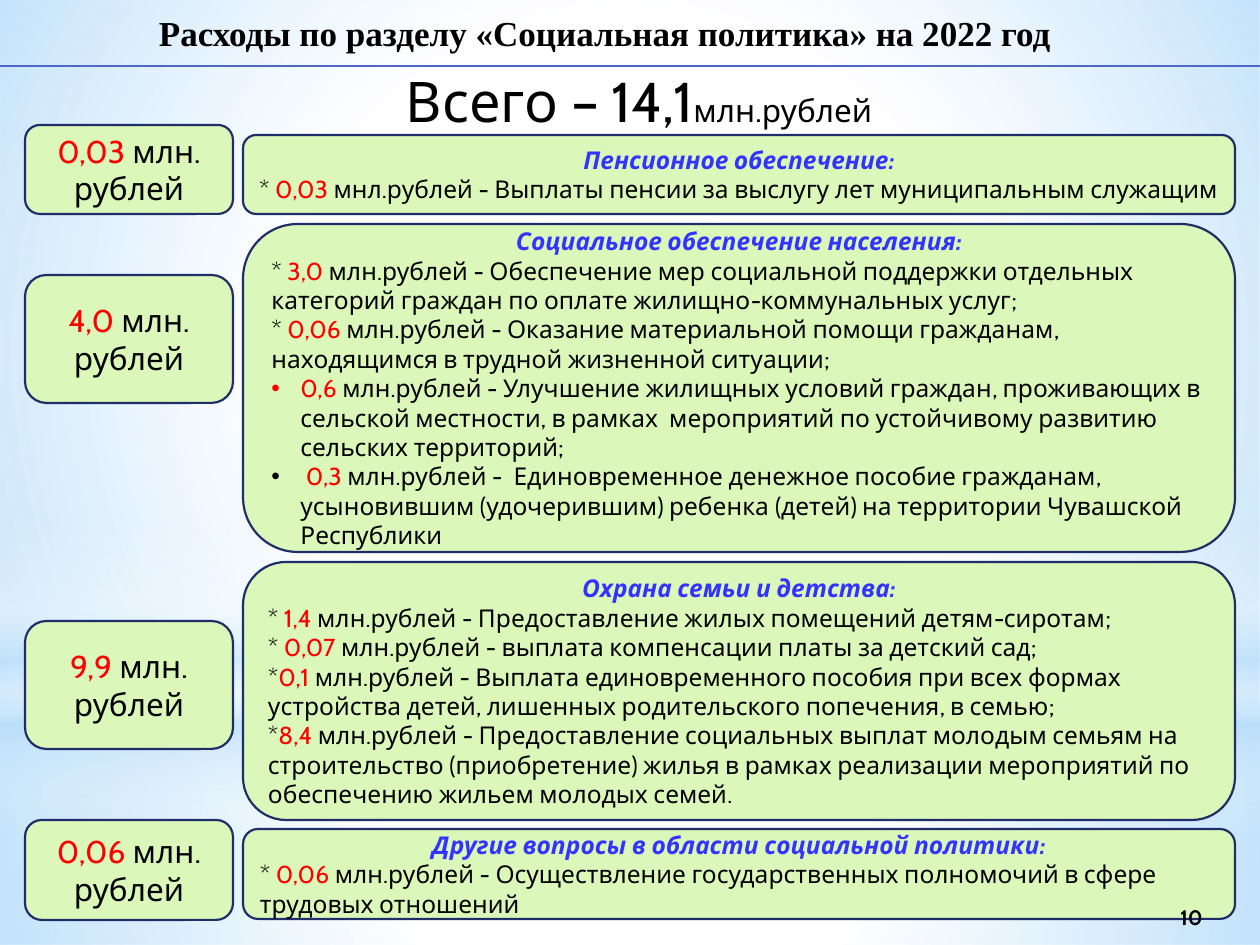
from dataclasses import dataclass

from lxml import etree
from pptx import Presentation
from pptx.dml.color import RGBColor
from pptx.enum import shapes, text
from pptx.oxml import ns
from pptx.util import Emu, Pt

BLACK = RGBColor(0, 0, 0)
RED = RGBColor(0xFF, 0, 0)
BLUE = RGBColor(0x33, 0x33, 0xFF)
GREEN = RGBColor(0xDC, 0xF7, 0xBA)
NAVY = RGBColor(0x1F, 0x2E, 0x69)
RULE = RGBColor(0x4E, 0x67, 0xC8)
WHITE = RGBColor(0xFF, 0xFF, 0xFF)
SKY = RGBColor(0xB4, 0xDC, 0xFA)

KIND = shapes.MSO_SHAPE
CENTER, LEFT = text.PP_ALIGN.CENTER, text.PP_ALIGN.LEFT
DPI = 126
WIDE, HIGH = 1260, 945
CARD_X, CARD_W = 25, 208
BODY_X, BODY_W = 243, 992
INDENT = 29


@dataclass
class Glow:
    kind: int
    top: int
    high: int
    stops: list  # position %, colour, opacity %
    round: bool = True


@dataclass
class Item:
    mark: str
    sum: str
    rest: str
    dot: bool = False


@dataclass
class Topic:
    total: str
    card: tuple  # top, height
    body: tuple  # top, height
    head: str
    items: list


GLOWS = [
    Glow(KIND.RECTANGLE, 703, 242, [(0, WHITE, 91), (37, WHITE, 76), (100, SKY, 79)]),
    Glow(KIND.RECTANGLE, 0, 703, [(0, WHITE, 89), (48, WHITE, 62), (100, SKY, 79)]),
    Glow(KIND.RECTANGLE, 519, 315, [(0, WHITE, 0), (29, WHITE, 30), (45, SKY, 40),
                                    (55, WHITE, 26), (65, SKY, 60), (100, WHITE, 0)], False),
    Glow(KIND.OVAL, 220, 703, [(0, WHITE, 100), (56, WHITE, 0)]),
]

TOPICS = [
    Topic("0,03 ", (125, 89), (135, 79), "Пенсионное обеспечение:", [
        Item("* ", "0,03 ", "мнл.рублей - Выплаты пенсии за выслугу лет муниципальным служащим"),
    ]),
    Topic("4,0 ", (275, 128), (224, 328), "Социальное обеспечение населения:", [
        Item("* ", "3,0", " млн.рублей - Обеспечение мер социальной поддержки отдельных "
             "категорий граждан по оплате жилищно-коммунальных услуг;"),
        Item("*", " 0,06 ", "млн.рублей - Оказание материальной помощи гражданам, "
             "находящимся в трудной жизненной ситуации;"),
        Item("", "0,6 ", "млн.рублей - Улучшение жилищных условий граждан, проживающих в "
             "сельской местности, в рамках  мероприятий по устойчивому развитию "
             "сельских территорий;", True),
        Item(" ", "0,3", " млн.рублей -  Единовременное денежное пособие гражданам, "
             "усыновившим (удочерившим) ребенка (детей) на территории Чувашской "
             "Республики", True),
    ]),
    Topic("9,9 ", (621, 128), (562, 258), "Охрана семьи и детства:", [
        Item("* ", "1,4", " млн.рублей - Предоставление жилых помещений детям-сиротам;"),
        Item("* ", "0,07", " млн.рублей - выплата компенсации платы за детский сад;"),
        Item("*", "0,1", " млн.рублей - Выплата единовременного пособия при всех формах "
             "устройства детей, лишенных родительского попечения, в семью;"),
        Item("*", "8,4", " млн.рублей - Предоставление социальных выплат молодым семьям на "
             "строительство (приобретение) жилья в рамках реализации мероприятий по "
             "обеспечению жильем молодых семей."),
    ]),
    Topic("0,06 ", (820, 100), (829, 90), "Другие вопросы в области социальной политики:", [
        Item("*", " 0,06 ", "млн.рублей - Осуществление государственных полномочий в сфере "
             "трудовых отношений"),
    ]),
]


def px(n: int) -> Emu:
    return Emu(round(n * 914400 / DPI))


def sub(node, tag: str, **attrs):
    return etree.SubElement(node, ns.qn(tag), {k: str(v) for k, v in attrs.items()})


def put(para, words: str, *, size=14, color=BLACK, font="Cabin", bold=False, slant=False) -> None:
    if not words:
        return
    run = para.add_run()
    run.text = words
    face = run.font
    face.size, face.name, face.bold, face.italic = Pt(size), font, bold, slant
    face.color.rgb = color


def frame(shape, anchor=text.MSO_ANCHOR.MIDDLE, align=CENTER):
    """Set up the text frame and return its first paragraph."""
    tf = shape.text_frame
    tf.word_wrap = True
    tf.vertical_anchor = anchor
    para = tf.paragraphs[0]
    para.alignment = align
    return para


def label(slide, x: int, y: int, w: int, h: int, **opts):
    return frame(slide.shapes.add_textbox(px(x), px(y), px(w), px(h)), **opts)


def panel(slide, x: int, y: int, w: int, h: int):
    box = slide.shapes.add_shape(KIND.ROUNDED_RECTANGLE, px(x), px(y), px(w), px(h))
    box.shadow.inherit = False
    box.fill.solid()
    box.fill.fore_color.rgb = GREEN
    box.line.color.rgb = NAVY
    box.line.width = Pt(1.25)
    return box


def shine(slide, glow: Glow) -> None:
    shape = slide.shapes.add_shape(glow.kind, 0, px(glow.top), px(WIDE), px(glow.high))
    shape.shadow.inherit = False
    shape.line.fill.background()
    shape.fill.solid()
    solid = shape.element.spPr.find(ns.qn("a:solidFill"))
    grad = etree.Element(ns.qn("a:gradFill"), {"rotWithShape": "1"})
    stops = sub(grad, "a:gsLst")
    for pos, color, alpha in glow.stops:
        tint = sub(sub(stops, "a:gs", pos=pos * 1000), "a:srgbClr", val=color)
        sub(tint, "a:alpha", val=alpha * 1000)
    if glow.round:
        sub(sub(grad, "a:path", path="circle"), "a:fillToRect",
            l=50000, t=50000, r=50000, b=50000)
    else:
        sub(grad, "a:lin", ang=90 * 60000, scaled=0)
    solid.getparent().replace(solid, grad)


def entry(shape, item: Item) -> None:
    para = shape.text_frame.add_paragraph()
    para.alignment = LEFT
    if item.dot:
        props = para._p.get_or_add_pPr()
        props.set("marL", str(px(INDENT)))
        props.set("indent", str(-px(INDENT)))
        sub(props, "a:buFont", typeface="Arial")
        sub(props, "a:buChar", char="•")
    put(para, item.mark)
    put(para, item.sum, color=RED)
    put(para, item.rest)


def section(slide, topic: Topic) -> None:
    body = panel(slide, BODY_X, topic.body[0], BODY_W, topic.body[1])
    put(frame(body), topic.head, color=BLUE, bold=True, slant=True)
    for item in topic.items:
        entry(body, item)
    card = frame(panel(slide, CARD_X, topic.card[0], CARD_W, topic.card[1]))
    put(card, topic.total, size=18, color=RED)
    put(card, "млн. рублей", size=18)


def main() -> None:
    deck = Presentation()
    deck.slide_width, deck.slide_height = px(WIDE), px(HIGH)
    slide = deck.slides.add_slide(deck.slide_layouts[6])

    # Background
    for glow in GLOWS:
        shine(slide, glow)

    # Title, rule and total
    title = label(slide, 35, 5, 1140, 76, anchor=text.MSO_ANCHOR.TOP)
    put(title, "Расходы по разделу «Социальная политика» на 2022 год",
        size=20, font="Times New Roman", bold=True)
    rule = slide.shapes.add_connector(shapes.MSO_CONNECTOR.STRAIGHT, 0, px(66), px(WIDE), px(66))
    rule.line.color.rgb = RULE
    rule.line.width = Pt(0.75)
    sub(rule.element.spPr, "a:effectLst")
    total = label(slide, 282, 66, 714, 69)
    put(total, "Всего – 14,1", size=32)
    put(total, "млн.рублей", size=18)

    # Sections
    for topic in TOPICS:
        section(slide, topic)

    # Page number
    put(label(slide, 1123, 892, 137, 50), "10", size=12, bold=True)

    deck.save("out.pptx")


if __name__ == "__main__":
    main()
